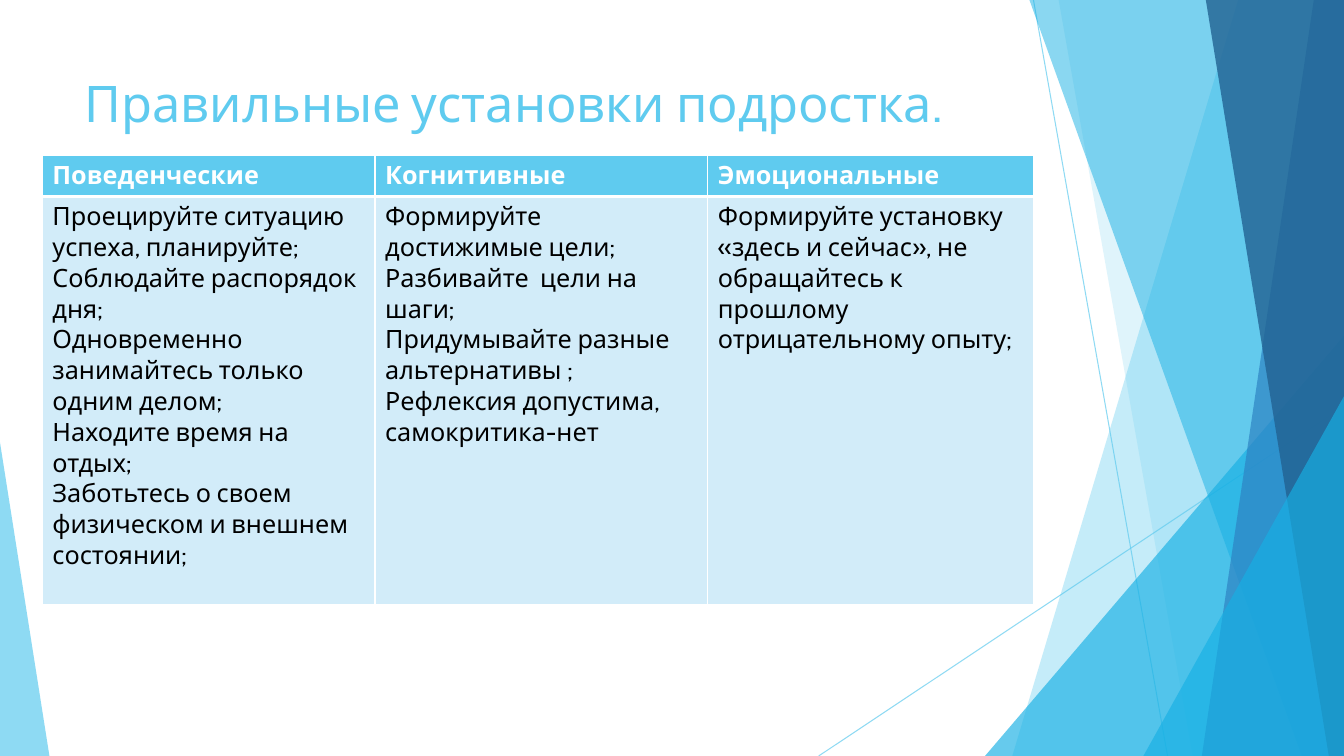
from dataclasses import dataclass

from lxml import etree
from pptx import Presentation
from pptx.dml.color import RGBColor
from pptx.enum.shapes import MSO_CONNECTOR, MSO_SHAPE
from pptx.oxml.ns import qn
from pptx.util import Inches, Pt

STRAIGHT = MSO_CONNECTOR.STRAIGHT
TRIANGLE = MSO_SHAPE.ISOSCELES_TRIANGLE

SKY = RGBColor(0x5F, 0xCB, 0xEF)
CYAN = RGBColor(0x17, 0xB0, 0xE4)
BLUE = RGBColor(0x2E, 0x83, 0xC3)
NAVY = RGBColor(0x22, 0x62, 0x92)
PALE = RGBColor(0xD2, 0xEC, 0xF9)
WHITE = RGBColor(0xFF, 0xFF, 0xFF)
BLACK = RGBColor(0x00, 0x00, 0x00)

FONT = "Cabin"
WIDTH, HEIGHT = 13.33, 7.5
COLUMN_WIDTHS = (3.3, 3.3, 3.23)
ROW_HEIGHTS = (0.41, 4.05)


@dataclass
class Ray:
    start: tuple[float, float]
    end: tuple[float, float]


@dataclass
class Band:
    top_x: float
    bottom_x: float
    color: RGBColor
    opacity: int


@dataclass
class Wedge:
    left: float
    top: float
    width: float
    apex: float
    color: RGBColor
    opacity: int


@dataclass
class Column:
    heading: str
    rules: list[str]


RAYS = [Ray((10.25, 0), (11.58, HEIGHT)), Ray((WIDTH, 4.03), (8.12, HEIGHT))]

FACETS = [
    Band(12.28, 10.04, SKY, 36),
    Band(10.5, 11.83, SKY, 20),
    Wedge(9.77, 3.33, 3.56, 1, CYAN, 66),
    Band(10.21, 12.91, CYAN, 50),
    Band(13.03, 11.92, BLUE, 70),
    Band(11.96, 13.18, NAVY, 80),
    Wedge(11.34, 3.93, 1.99, 1, CYAN, 66),
    Wedge(0, 4.39, 0.49, 0, SKY, 70),
]

COLUMNS = [
    Column("Поведенческие", [
        "Проецируйте ситуацию успеха, планируйте;",
        "Соблюдайте распорядок дня;",
        "Одновременно занимайтесь только одним делом;",
        "Находите время на отдых;",
        "Заботьтесь о своем физическом и внешнем состоянии;",
    ]),
    Column("Когнитивные", [
        "Формируйте достижимые цели;",
        "Разбивайте  цели на шаги;",
        "Придумывайте разные альтернативы ;",
        "Рефлексия допустима, самокритика-нет",
    ]),
    Column("Эмоциональные", [
        "Формируйте установку «здесь и сейчас», не обращайтесь к прошлому "
        "отрицательному опыту;",
    ]),
]


def set_opacity(shape, percent: int) -> None:
    for color in shape._element.spPr.iter(qn("a:srgbClr")):
        etree.SubElement(color, qn("a:alpha"), val=str(percent * 1000))


def draw_ray(page, ray: Ray) -> None:
    points = [Inches(value) for value in (*ray.start, *ray.end)]
    line = page.shapes.add_connector(STRAIGHT, *points)
    line.line.color.rgb = SKY
    line.line.width = Pt(0.75)
    set_opacity(line, 70)
    etree.SubElement(line._element.spPr, qn("a:effectLst"))


def draw_facet(page, facet: Band | Wedge) -> None:
    if isinstance(facet, Band):
        builder = page.shapes.build_freeform(Inches(facet.top_x), 0)
        corners = [(WIDTH, 0), (WIDTH, HEIGHT), (facet.bottom_x, HEIGHT)]
        builder.add_line_segments([(Inches(x), Inches(y)) for x, y in corners])
        shape = builder.convert_to_shape()
    else:
        shape = page.shapes.add_shape(
            TRIANGLE, Inches(facet.left), Inches(facet.top),
            Inches(facet.width), Inches(HEIGHT - facet.top))
        shape.adjustments[0] = facet.apex
    shape.shadow.inherit = False
    shape.fill.solid()
    shape.fill.fore_color.rgb = facet.color
    shape.line.fill.background()
    set_opacity(shape, facet.opacity)


def write(frame, lines: list[str], size: int, color: RGBColor, bold: bool) -> None:
    frame.word_wrap = True
    for index, line in enumerate(lines):
        para = frame.add_paragraph() if index else frame.paragraphs[0]
        span = para.add_run()
        span.text = line
        span.font.name = FONT
        span.font.size = Pt(size)
        span.font.bold = bold
        span.font.color.rgb = color


def set_borders(cell, top: int, bottom: int) -> None:
    properties = cell._tc.get_or_add_tcPr()
    edges = {"a:lnL": 1, "a:lnR": 1, "a:lnT": top, "a:lnB": bottom}
    for index, (tag, width) in enumerate(edges.items()):
        edge = etree.Element(qn(tag), w=str(Pt(width)))
        fill = etree.SubElement(edge, qn("a:solidFill"))
        etree.SubElement(fill, qn("a:srgbClr"), val=str(WHITE))
        properties.insert(index, edge)


def fill_cell(cell, lines: list[str], is_heading: bool) -> None:
    cell.fill.solid()
    cell.fill.fore_color.rgb = SKY if is_heading else PALE
    write(cell.text_frame, lines, 18, WHITE if is_heading else BLACK, is_heading)
    set_borders(cell, *((1, 3) if is_heading else (3, 1)))


def draw_table(page) -> None:
    table = page.shapes.add_table(
        len(ROW_HEIGHTS), len(COLUMNS), Inches(0.42), Inches(1.54),
        Inches(sum(COLUMN_WIDTHS)), Inches(sum(ROW_HEIGHTS))).table
    for row, height in zip(table.rows, ROW_HEIGHTS):
        row.height = Inches(height)
    for index, column in enumerate(COLUMNS):
        table.columns[index].width = Inches(COLUMN_WIDTHS[index])
        fill_cell(table.cell(0, index), [column.heading], True)
        fill_cell(table.cell(1, index), column.rules, False)


def main() -> None:
    deck = Presentation()
    deck.slide_width = Inches(WIDTH)
    deck.slide_height = Inches(HEIGHT)
    page = deck.slides.add_slide(deck.slide_layouts[6])
    for ray in RAYS:
        draw_ray(page, ray)
    for facet in FACETS:
        draw_facet(page, facet)
    box = page.shapes.add_textbox(Inches(0.74), Inches(0.67), Inches(9.4), Inches(1.44))
    write(box.text_frame, ["Правильные установки подростка."], 36, SKY, False)
    draw_table(page)
    deck.save("out.pptx")


if __name__ == "__main__":
    main()
